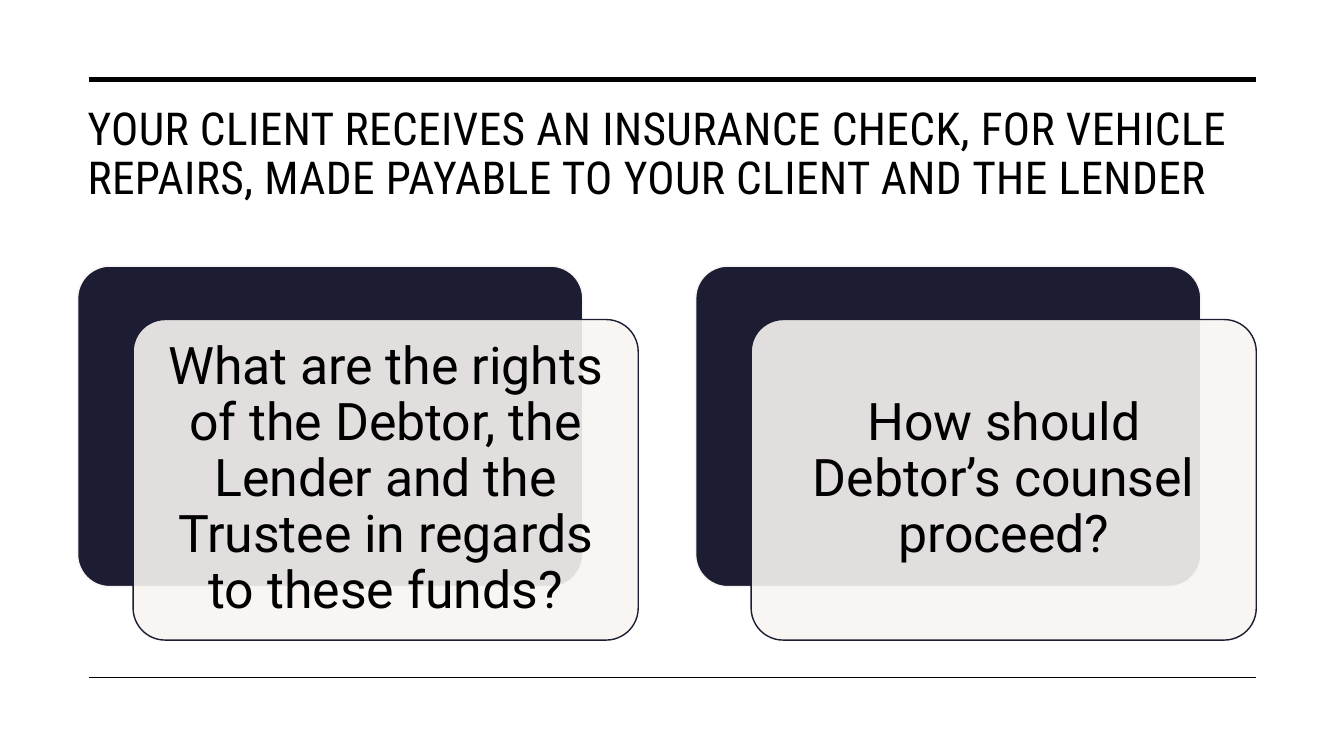
from pptx import Presentation
from pptx.dml.color import RGBColor
from pptx.enum.shapes import MSO_CONNECTOR as Connector, MSO_SHAPE as Shape
from pptx.enum.text import MSO_ANCHOR as Anchor, PP_ALIGN as Align
from pptx.oxml import parse_xml
from pptx.oxml.ns import nsdecls, qn
from pptx.util import Inches, Pt

TITLE = ("YOUR CLIENT RECEIVES AN INSURANCE CHECK, FOR VEHICLE REPAIRS, "
         "MADE PAYABLE TO YOUR CLIENT AND THE LENDER")
QUESTIONS = [
    "What are the rights of the Debtor, the Lender and the Trustee in regards to these funds?",
    "How should Debtor’s counsel proceed?",
]
RULES = [(0.79, 3.5), (6.72, 1)]

THEME = {
    "black": RGBColor.from_string("000000"),
    "navy": RGBColor.from_string("1C1C32"),
    "cream": RGBColor.from_string("F8F4F1"),
    "title": {"name": "Roboto Condensed", "size": Pt(32.4)},
    "question": {"name": "Roboto", "size": Pt(37)},
}

WIDTH, HEIGHT = 13.33, 7.5
LEFT, RIGHT = 0.77, 12.46
CARD_TOP, CARD_WIDTH, CARD_HEIGHT = 2.64, 5.01, 3.18
SHIFT_X, SHIFT_Y = 0.55, 0.53
PITCH = RIGHT - LEFT - CARD_WIDTH - SHIFT_X
TEXT_GAP, TEXT_INSET = 0.1, 0.15


def set_attributes(target, values):
    for name, value in values.items():
        setattr(target, name, value)


def add_rule(slide, y, weight):
    rule = slide.shapes.add_connector(
        Connector.STRAIGHT, Inches(LEFT + 0.11), Inches(y), Inches(RIGHT), Inches(y))
    set_attributes(rule.line, {"width": Pt(weight)})
    rule.line.color.rgb = THEME["black"]
    rule._element.spPr.append(parse_xml(f"<a:effectLst {nsdecls('a')}/>"))


def add_card(slide, x, y, fill, outline, opacity=100):
    card = slide.shapes.add_shape(
        Shape.ROUNDED_RECTANGLE, *map(Inches, (x, y, CARD_WIDTH, CARD_HEIGHT)))
    card.adjustments[0] = 0.1
    card.shadow.inherit = False
    card.fill.solid()
    card.fill.fore_color.rgb = THEME[fill]
    card.line.color.rgb = THEME[outline]
    card.line.width = Pt(1)
    if opacity < 100:
        color = card._element.spPr.find(qn("a:solidFill"))[0]
        color.append(parse_xml(f'<a:alpha {nsdecls("a")} val="{opacity * 1000}"/>'))


def add_text(slide, box, text, font, frame_format, paragraph_format):
    frame = slide.shapes.add_textbox(*map(Inches, box)).text_frame
    set_attributes(frame, {"word_wrap": True, **frame_format})
    paragraph = frame.paragraphs[0]
    set_attributes(paragraph, {"line_spacing": 0.9, **paragraph_format})
    run = paragraph.add_run()
    run.text = text
    set_attributes(run.font, THEME[font])
    run.font.color.rgb = THEME["black"]
    return run


def add_question(slide, column, question):
    x = LEFT + column * PITCH
    add_card(slide, x, CARD_TOP, "navy", "cream")
    x, y = x + SHIFT_X, CARD_TOP + SHIFT_Y
    add_card(slide, x, y, "cream", "navy", opacity=90)
    box = (x + TEXT_GAP, y + TEXT_GAP,
           CARD_WIDTH - 2 * TEXT_GAP, CARD_HEIGHT - 2 * TEXT_GAP)
    margins = {f"margin_{side}": Inches(TEXT_INSET)
               for side in ("left", "right", "top", "bottom")}
    add_text(slide, box, question, "question",
             {"vertical_anchor": Anchor.MIDDLE, **margins},
             {"alignment": Align.CENTER})


def main():
    presentation = Presentation()
    set_attributes(presentation, {"slide_width": Inches(WIDTH),
                                  "slide_height": Inches(HEIGHT)})
    slide = presentation.slides.add_slide(presentation.slide_layouts[6])
    for y, weight in RULES:
        add_rule(slide, y, weight)
    title = add_text(slide, (LEFT, 1.01, RIGHT - LEFT, 1.5), TITLE, "title",
                     {"vertical_anchor": Anchor.TOP}, {"alignment": Align.LEFT})
    title.font._element.set("spc", "30")
    for column, question in enumerate(QUESTIONS):
        add_question(slide, column, question)
    presentation.save("out.pptx")


if __name__ == "__main__":
    main()
